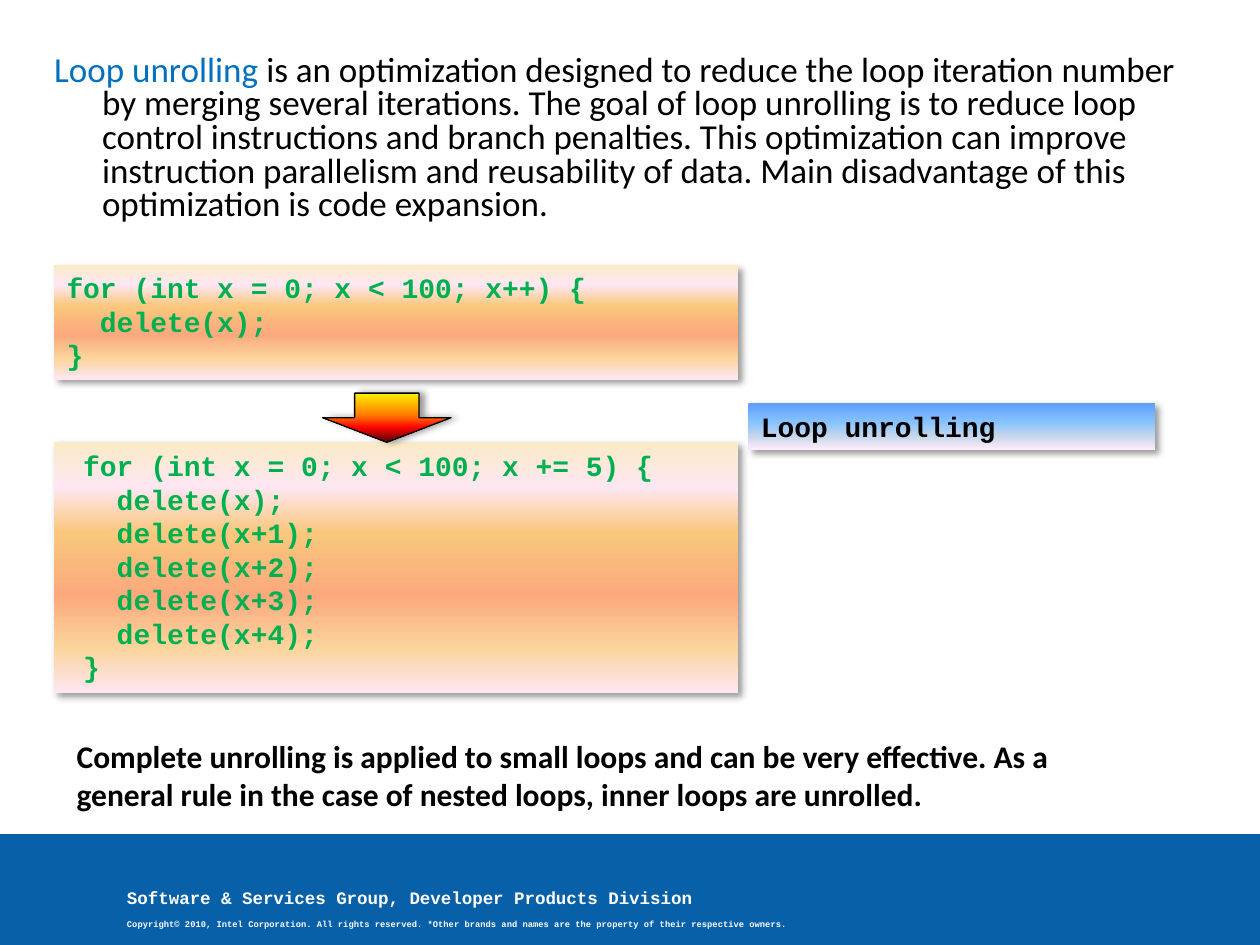
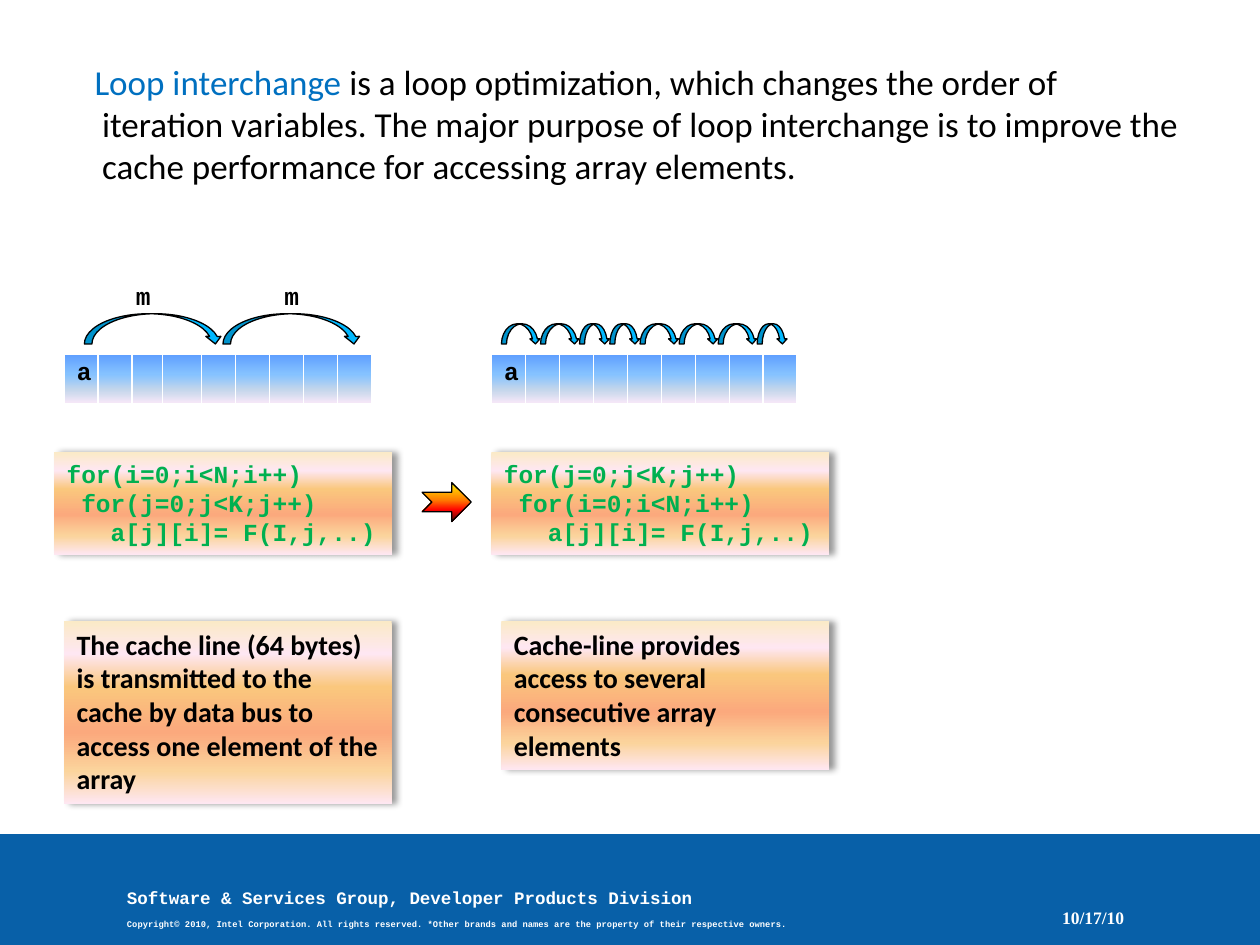
import itertools
import lxml.etree
import pptx
import pptx.dml.color
import pptx.enum.shapes
import pptx.enum.text
import pptx.oxml.ns
import pptx.util

Inches = pptx.util.Inches
Pt = pptx.util.Pt
qn = pptx.oxml.ns.qn
PRESET = pptx.enum.shapes.MSO_SHAPE
ALIGN = pptx.enum.text.PP_ALIGN
ANCHOR = pptx.enum.text.MSO_ANCHOR


class Theme:
    black, white = "000000", "FFFFFF"
    band, term, code, hop = "0860A8", "0070C0", "00B050", "00B8FF"
    peach = [(0, "FBEAC7"), (18, "FEE7F2"), (36, "FAC77D"),
             (61, "FBA97D"), (82, "FBD49C"), (100, "FEE7F2")]
    sky = [(0, "5E9EFF"), (40, "85C2FF"), (70, "C4D6EB"), (100, "FFEBFA")]
    fire = [(0, "FFF200"), (45, "FF7A00"), (70, "FF0300"), (100, "4D0808")]
    sans, mono, serif = "Calibri", "Courier New", "Times New Roman"
    lead, note, large, medium, footer, legal = 20, 18, 16, 14, 10, 5


FOOTER = "Software & Services Group, Developer Products Division"
COPYRIGHT = ("Copyright© 2010, Intel Corporation. All rights reserved. "
             "*Other brands and names are the property of their respective owners.")
DATE = "10/17/10"

UNROLLING = [
    ("Loop unrolling ", Theme.term),
    ("is an optimization designed to reduce the loop iteration number by merging several "
     "iterations. The goal of loop unrolling is to reduce loop control instructions and branch "
     "penalties. This optimization can improve instruction parallelism and reusability of data. "
     "Main disadvantage of this optimization is code expansion.", Theme.black),
]
ROLLED_CODE = ["for (int x = 0; x < 100; x++) {", "  delete(x);", "}"]
UNROLLED_CODE = [
    " for (int x = 0; x < 100; x += 5) {",
    "   delete(x);",
    "   delete(x+1);",
    "   delete(x+2);",
    "   delete(x+3);",
    "   delete(x+4);",
    " }",
]
UNROLLING_LABEL = "Loop unrolling"
UNROLLING_RULE = ("Complete unrolling is applied to small loops and can be very effective. "
                  "As a general rule in the case of nested loops, inner loops are unrolled.")

INTERCHANGE = [
    ("Loop interchange", Theme.term),
    (" is a loop optimization, which changes the order of iteration variables. The major purpose "
     "of loop interchange is to improve the cache performance for accessing array elements.",
     Theme.black),
]
LONG, SHORT = 0.31, 0.24
ORDERS = [
    {
        "code": ["for(i=0;i<N;i++)", " for(j=0;j<K;j++)", "   a[j][i]= F(I,j,..)"],
        "note": "The cache line (64 bytes) is transmitted to the cache by data bus "
                "to access one element of the array",
        "code_left": 0.43, "note_left": 0.51, "note_height": 1.45, "array_left": 0.51,
        "cells": [0.27, 0.27, 0.24, 0.31] + [0.27] * 5,
        "hops": [1.1, 1.1], "hop_left": 0.67, "hop_top": 2.49, "hop_height": 0.24,
        "strides": [("m", 0.98), ("m", 2.16)],
    },
    {
        "code": ["for(j=0;j<K;j++)", " for(i=0;i<N;i++)", "   a[j][i]= F(I,j,..)"],
        "note": "Cache-line provides access to several consecutive array elements",
        "code_left": 3.9, "note_left": 3.98, "note_height": 1.18, "array_left": 3.9,
        "cells": [0.27] * 9,
        "hops": [LONG, LONG, SHORT, SHORT, LONG, LONG, LONG, SHORT],
        "hop_left": 3.98, "hop_top": 2.57, "hop_height": 0.16,
        "strides": [],
    },
]


def color(value):
    return pptx.dml.color.RGBColor.from_string(value)


def add_node(parent, tag, **attributes):
    return lxml.etree.SubElement(parent, qn(tag), {k: str(v) for k, v in attributes.items()})


def write(frame, content, size, font=Theme.sans, ink=Theme.black, bold=True, align=None,
          anchor=ANCHOR.TOP, margins=(0.1, 0.05), wrap=True, spacing=None, before=0,
          indent=None):
    frame.word_wrap = wrap
    frame.auto_size = pptx.enum.text.MSO_AUTO_SIZE.NONE
    frame.vertical_anchor = anchor
    frame.margin_left = frame.margin_right = Inches(margins[0])
    frame.margin_top = frame.margin_bottom = Inches(margins[1])
    lines = [content] if isinstance(content, str) else content
    for index, line in enumerate(lines):
        para = frame.add_paragraph() if index or frame.text else frame.paragraphs[0]
        if indent:
            properties = para._p.get_or_add_pPr()
            properties.set("marL", str(Inches(indent[0])))
            properties.set("indent", str(Inches(indent[1])))
            add_node(properties, "a:buNone")
        para.alignment = align or ALIGN.LEFT
        para.space_before = Pt(before)
        para.line_spacing = spacing
        for words, shade in [(line, ink)] if isinstance(line, str) else line:
            span = para.add_run()
            span.text = words
            span.font.name = font
            span.font.size = Pt(size)
            span.font.bold = bold
            span.font.color.rgb = color(shade)


def paint(fill, holder, look):
    if isinstance(look, str):
        fill.solid()
        fill.fore_color.rgb = color(look)
        return
    fill.gradient()
    fill.gradient_angle = 270
    stops = holder.find(".//" + qn("a:gsLst"))
    for stop in list(stops):
        stops.remove(stop)
    for position, shade in look:
        add_node(add_node(stops, "a:gs", pos=position * 1000), "a:srgbClr", val=shade)


def add_shape(page, preset, place, look, outline=False, shadow=None):
    shape = page.shapes.add_shape(preset, *map(Inches, place))
    paint(shape.fill, shape.element.spPr, look)
    if outline:
        shape.line.color.rgb = color(Theme.black)
        shape.line.width = Pt(0.75)
    else:
        shape.line.fill.background()
    shape.shadow.inherit = False
    if shadow is not None:
        effects = shape.element.spPr.find(qn("a:effectLst"))
        cast = add_node(effects, "a:outerShdw", blurRad=Pt(4), dist=Pt(3),
                        dir=shadow * 60000, algn="tl", rotWithShape=0)
        add_node(add_node(cast, "a:srgbClr", val=Theme.black), "a:alpha", val=40000)
    return shape


def add_panel(page, place, content, look=Theme.peach, shadow=0, **style):
    panel = add_shape(page, PRESET.RECTANGLE, place, look, shadow=shadow)
    write(panel.text_frame, content, **style)


def add_text(page, place, content, **style):
    box = page.shapes.add_textbox(*map(Inches, place))
    write(box.text_frame, content, **style)
    return box


def add_page(deck, place, lead, **style):
    page = deck.slides.add_slide(deck.slide_layouts[1])
    title, body = page.placeholders
    title.element.getparent().remove(title.element)
    body.left, body.top, body.width, body.height = map(Inches, place)
    write(body.text_frame, [lead], size=Theme.lead, bold=False, margins=(0, 0), **style)
    return page


def move_footer_to_layout(page):
    band = add_shape(page, PRESET.RECTANGLE, (0, 6.62, 10, 0.88), Theme.band)
    style = dict(font=Theme.mono, ink=Theme.white, wrap=False)
    box = add_text(page, (0.91, 6.96, 5.13, 0.45), FOOTER, size=Theme.footer,
                   spacing=1.2, **style)
    write(box.text_frame, COPYRIGHT, size=Theme.legal, spacing=1.5, before=3.1, **style)
    for part in (band, box):
        page.slide_layout.shapes.element.append(part.element)


def add_array(page, left, widths):
    frame = page.shapes.add_table(1, len(widths), Inches(left), Inches(2.81),
                                  Inches(sum(widths)), Inches(0.4))
    table = frame.table
    table.first_row = table.horz_banding = False
    table.rows[0].height = Inches(0.4)
    for index, width in enumerate(widths):
        table.columns[index].width = Inches(width)
        cell = table.cell(0, index)
        properties = cell._tc.get_or_add_tcPr()
        for side, weight in (("L", 1), ("R", 1), ("T", 1), ("B", 3)):
            edge = add_node(properties, "a:ln" + side, w=Pt(weight))
            add_node(add_node(edge, "a:solidFill"), "a:srgbClr", val=Theme.white)
        paint(cell.fill, properties, Theme.sky)
    para = table.cell(0, 0).text_frame.paragraphs[0]
    span = para.add_run()
    span.text = "a"
    span.font.name = Theme.mono
    span.font.size = Pt(Theme.medium)
    span.font.bold = True
    span.font.color.rgb = color(Theme.black)


def build_unrolling(deck):
    page = add_page(deck, (0.43, 0.44, 8.98, 1.42), UNROLLING, spacing=0.8,
                    indent=(0.38, -0.38))
    move_footer_to_layout(page)
    mono = dict(size=Theme.large, font=Theme.mono, shadow=45)
    add_panel(page, (0.43, 2.1, 5.43, 0.91), ROLLED_CODE, ink=Theme.code, **mono)
    add_panel(page, (0.43, 3.51, 5.43, 1.99), UNROLLED_CODE, ink=Theme.code, **mono)
    add_shape(page, PRESET.DOWN_ARROW, (2.56, 3.12, 1.02, 0.39), Theme.fire,
              outline=True, shadow=0)
    add_panel(page, (5.94, 3.2, 3.23, 0.37), UNROLLING_LABEL, look=Theme.sky, **mono)
    add_text(page, (0.51, 5.8, 8.58, 0.98), UNROLLING_RULE, size=Theme.note)


def build_interchange(deck):
    page = add_page(deck, (0.43, 0.48, 8.98, 1.14), INTERCHANGE, indent=(0.38, -0.06))
    add_text(page, (7.81, 7.1, 1.21, 0.4), DATE, size=Theme.footer, font=Theme.serif,
             ink=Theme.white, align=ALIGN.RIGHT, anchor=ANCHOR.MIDDLE, spacing=0.8)
    for order in ORDERS:
        add_panel(page, (order["code_left"], 3.59, 2.68, 0.81), order["code"],
                  size=Theme.medium, font=Theme.mono, ink=Theme.code)
        add_array(page, order["array_left"], order["cells"])
        starts = itertools.accumulate(order["hops"], initial=order["hop_left"])
        for left, width in zip(starts, order["hops"]):
            add_shape(page, PRESET.CURVED_DOWN_ARROW,
                      (left, order["hop_top"], width, order["hop_height"]),
                      Theme.hop, outline=True)
        for stride, left in order["strides"]:
            add_text(page, (left, 2.18, 0.24, 0.34), stride, size=Theme.medium, font=Theme.mono)
        add_panel(page, (order["note_left"], 4.93, 2.6, order["note_height"]), order["note"],
                  size=Theme.large)
    add_shape(page, PRESET.NOTCHED_RIGHT_ARROW, (3.35, 3.83, 0.39, 0.31), Theme.fire,
              outline=True)


def main():
    deck = pptx.Presentation()
    deck.slide_width, deck.slide_height = Inches(10), Inches(7.5)
    build_unrolling(deck)
    build_interchange(deck)
    deck.save("out.pptx")


if __name__ == "__main__":
    main()
